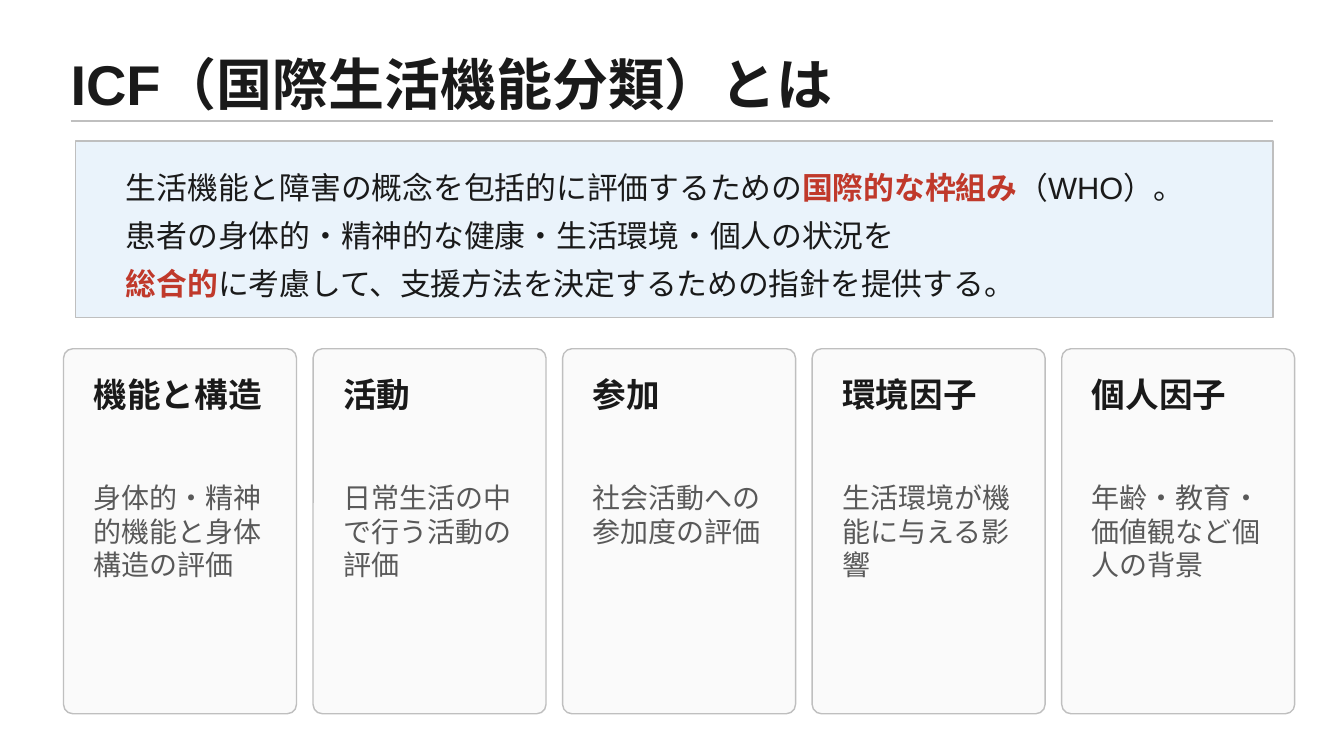
"""Build a one-slide overview of the ICF and its five components."""
import pptx
import pptx.dml.color
import pptx.enum.shapes
import pptx.enum.text
import pptx.util
from lxml import etree

Pt = pptx.util.Pt
RGBColor = pptx.dml.color.RGBColor
MSO_SHAPE = pptx.enum.shapes.MSO_SHAPE
MSO_CONNECTOR = pptx.enum.shapes.MSO_CONNECTOR
MSO_ANCHOR = pptx.enum.text.MSO_ANCHOR
MSO_AUTO_SIZE = pptx.enum.text.MSO_AUTO_SIZE
PP_ALIGN = pptx.enum.text.PP_ALIGN

INK = RGBColor(0x1A, 0x1A, 0x1A)
GREY = RGBColor(0x59, 0x59, 0x59)
RED = RGBColor(0xC0, 0x39, 0x2B)
RULE = RGBColor(0xBF, 0xBF, 0xBF)
PALE_BLUE = RGBColor(0xEA, 0xF3, 0xFB)
CARD_FILL = RGBColor(0xFA, 0xFA, 0xFA)

SUMMARY = [
    [("生活機能と障害の概念を包括的に評価するための", False), ("国際的な枠組み", True), ("（WHO）。", False)],
    [("患者の身体的・精神的な健康・生活環境・個人の状況を", False)],
    [("総合的", True), ("に考慮して、支援方法を決定するための指針を提供する。", False)],
]
CARDS = [
    ("機能と構造", 145.4, "身体的・精神的機能と身体構造の評価"),
    ("活動", 133.2, "日常生活の中で行う活動の評価"),
    ("参加", 133.2, "社会活動への参加度の評価"),
    ("環境因子", 133.2, "生活環境が機能に与える影響"),
    ("個人因子", 133.2, "年齢・教育・価値観など個人の背景"),
]
CARD_LEFT, CARD_TOP, CARD_WIDTH, CARD_HEIGHT = 45.4, 249.1, 166.4, 260.7
CARD_PITCH, CARD_PAD = 178.25, 14.4


class Deck:
    """Hold the slide and its style, and draw each kind of element."""

    font = "Arial"

    def __init__(self, prs):
        """Add a slide with a title placeholder."""
        self.slide = prs.slides.add_slide(prs.slide_layouts[5])
        self.shapes = self.slide.shapes

    def run(self, p, text, size, color, bold=False):
        """Append one styled run to a paragraph."""
        r = p.add_run()
        r.text = text
        r.font.name = self.font
        r.font.size = Pt(size)
        r.font.bold = bold
        r.font.color.rgb = color

    def title(self, text, x, y, w, h):
        """Place and fill the title placeholder."""
        sp = self.shapes.title
        sp.left, sp.top, sp.width, sp.height = Pt(x), Pt(y), Pt(w), Pt(h)
        tf = sp.text_frame
        tf.auto_size = MSO_AUTO_SIZE.NONE
        tf.vertical_anchor = MSO_ANCHOR.MIDDLE
        tf.margin_left = tf.margin_right = tf.margin_top = tf.margin_bottom = 0
        p = tf.paragraphs[0]
        p.alignment = PP_ALIGN.LEFT
        self.run(p, text, 40, INK, True)

    def rule(self, x1, x2, y):
        """Draw a horizontal line."""
        line = self.shapes.add_connector(MSO_CONNECTOR.STRAIGHT, Pt(x1), Pt(y), Pt(x2), Pt(y))
        line.line.color.rgb = RULE
        line.line.width = Pt(1)
        etree.SubElement(line._element.spPr, pptx.oxml.ns.qn("a:effectLst"))

    def panel(self, kind, x, y, w, h, fill):
        """Draw an outlined, filled shape."""
        sp = self.shapes.add_shape(kind, Pt(x), Pt(y), Pt(w), Pt(h))
        sp.shadow.inherit = False
        sp.fill.solid()
        sp.fill.fore_color.rgb = fill
        sp.line.color.rgb = RULE
        sp.line.width = Pt(1)
        return sp

    def text(self, x, y, w, h):
        """Add a wrapping text box and return its frame."""
        tf = self.shapes.add_textbox(Pt(x), Pt(y), Pt(w), Pt(h)).text_frame
        tf.word_wrap = True
        return tf

    def summary(self, lines, x, y, w, h):
        """Write the definition with its key terms in red."""
        tf = self.text(x, y, w, h)
        tf.vertical_anchor = MSO_ANCHOR.MIDDLE
        for i, runs in enumerate(lines):
            p = tf.add_paragraph() if i else tf.paragraphs[0]
            p.line_spacing = 1.3
            for text, key in runs:
                self.run(p, text, 22, RED if key else INK, key)

    def card(self, x, heading, heading_width, body):
        """Draw one component card."""
        sp = self.panel(MSO_SHAPE.ROUNDED_RECTANGLE, x, CARD_TOP, CARD_WIDTH, CARD_HEIGHT, CARD_FILL)
        sp.adjustments[0] = 0.04
        left = x + CARD_PAD
        tf = self.text(left, CARD_TOP + CARD_PAD, heading_width, 65.5)
        self.run(tf.paragraphs[0], heading, 24, INK, True)
        tf = self.text(left, 339.8, 148.3, 158.4)
        self.run(tf.paragraphs[0], body, 20, GREY)


def main():
    """Build and save the slide."""
    prs = pptx.Presentation()
    prs.slide_width, prs.slide_height = Pt(960), Pt(540)
    deck = Deck(prs)
    deck.title("ICF（国際生活機能分類）とは", 50.4, 30.2, 859, 59)
    deck.rule(50.4, 909.4, 86.4)
    deck.panel(MSO_SHAPE.RECTANGLE, 54, 100.8, 855.4, 126, PALE_BLUE)
    deck.summary(SUMMARY, 82.8, 100.8, 798.5, 126)
    for i, card in enumerate(CARDS):
        deck.card(CARD_LEFT + i * CARD_PITCH, *card)
    prs.save("out.pptx")


if __name__ == "__main__":
    main()
